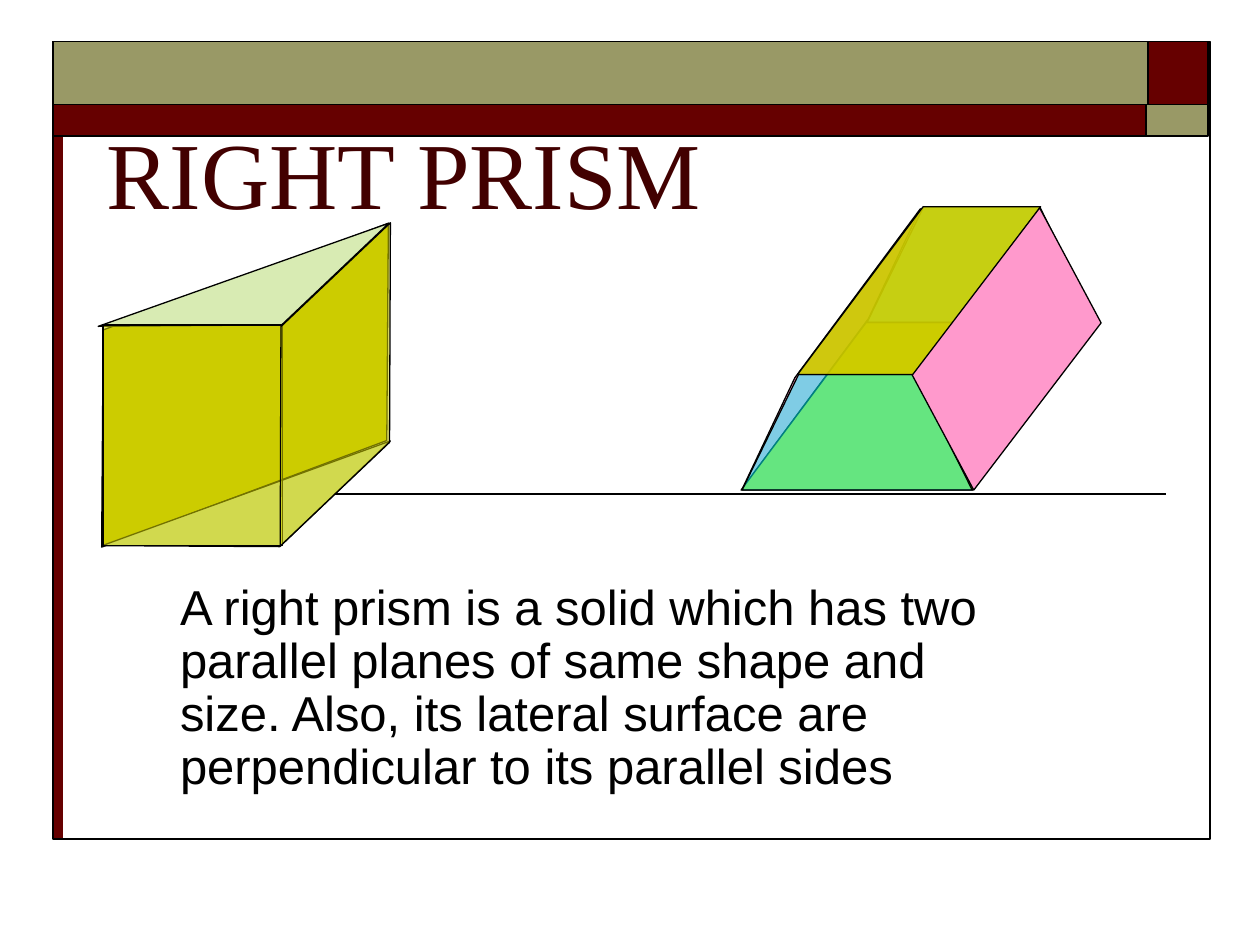
from lxml.etree import SubElement
from pptx import Presentation
from pptx.dml.color import RGBColor
from pptx.enum.shapes import MSO_CONNECTOR as CONN, MSO_SHAPE as SHAPE
from pptx.enum.text import MSO_ANCHOR as ANCHOR
from pptx.oxml.ns import qn
from pptx.util import Cm, Pt

MAROON, OLIVE, BLACK = "660000", "999966", "000000"
YELLOW, PINK, CYAN, PALE = "CCCC00", "FF99CC", "00FFFF", "D8EBB3"


def rgb(color):
    return RGBColor.from_string(color)


def style(s, fill=None, line=BLACK, width=0.75, alpha=None):
    """Set fill, opacity in percent and outline; drop the shadow."""
    s.shadow.inherit = False
    if fill:
        s.fill.solid()
        s.fill.fore_color.rgb = rgb(fill)
    else:
        s.fill.background()
    if alpha:
        clr = s.fill._xPr.find(qn("a:solidFill"))[0]
        SubElement(clr, qn("a:alpha")).set("val", str(alpha * 1000))
    if line:
        s.line.color.rgb = rgb(line)
        s.line.width = Pt(width)
    else:
        s.line.fill.background()


def add_box(sp, box, **fmt):
    s = sp.add_shape(SHAPE.RECTANGLE, *map(Cm, box))
    style(s, **fmt)


def add_slanted(sp, box, adj, rotation=0, **fmt):
    s = sp.add_shape(SHAPE.PARALLELOGRAM, *map(Cm, box))
    s.adjustments[0] = adj
    s.rotation = rotation
    style(s, **fmt)


def add_polygon(sp, points, **fmt):
    start, *rest = [(Cm(x), Cm(y)) for x, y in points]
    builder = sp.build_freeform(*start)
    builder.add_line_segments(rest, close=True)
    style(builder.convert_to_shape(), **fmt)


def add_line(sp, x1, y1, x2, y2, width=1):
    s = sp.add_connector(CONN.STRAIGHT, Cm(x1), Cm(y1), Cm(x2), Cm(y2))
    s.line.color.rgb = rgb(BLACK)
    s.line.width = Pt(width)
    SubElement(s._element.spPr, qn("a:effectLst"))


def add_text(sp, text, box, size, font, color=BLACK, anchor=ANCHOR.TOP,
             spacing=1.0, before=0):
    tf = sp.add_textbox(*map(Cm, box)).text_frame
    tf.word_wrap = True
    tf.vertical_anchor = anchor
    p = tf.paragraphs[0]
    p.line_spacing = spacing
    p.space_before = Pt(before)
    r = p.add_run()
    r.text = text
    r.font.size = Pt(size)
    r.font.name = font
    r.font.color.rgb = rgb(color)


def add_frame(sp):
    add_box(sp, (1.07, 2.74, 0.2, 14.17), fill=MAROON, line=None)
    for box, color in (
        ((23.09, 0.84, 1.27, 1.27), MAROON),
        ((1.07, 0.84, 22.07, 1.27), OLIVE),
        ((1.07, 2.11, 22.07, 0.64), MAROON),
        ((23.11, 2.11, 1.24, 0.64), OLIVE),
    ):
        add_box(sp, box, fill=color, width=1)
    add_line(sp, 23.5, 9.96, 2.11, 9.96)
    add_box(sp, (1.07, 0.84, 23.32, 16.08), width=1)


def add_triangular_back(sp):
    add_slanted(sp, (1.09, 5.72, 7.7, 4.09), 0.382, 339.5, fill=YELLOW)
    add_polygon(sp, [(5.64, 11.02), (7.87, 8.89), (2.06, 11)], fill=PALE)


def add_triangular_front(sp):
    add_polygon(sp, [(5.68, 6.55), (7.84, 4.5), (1.98, 6.58)], fill=PALE)
    add_box(sp, (2.08, 6.55, 3.61, 4.45), fill=YELLOW, alpha=56)
    add_slanted(sp, (3.71, 6.15, 6.1, 3.2), 0.956, 316.5, fill=YELLOW, alpha=56)


def add_trapezoidal_prism(sp):
    # Hidden side and base
    add_slanted(sp, (13.44, 6.78, 6.65, 0.48), 5.012, 306.6, fill=PINK)
    add_slanted(sp, (14.94, 6.5, 7.19, 3.38), 0.747, fill=YELLOW)
    # Far end, then the same end moved to the front
    end = [(22.12, 6.5), (20.96, 4.17), (18.62, 4.17), (17.48, 6.5)]
    for dx, dy in ((0, 0), (-2.52, 3.38)):
        add_polygon(sp, [(x + dx, y + dy) for x, y in end], fill=CYAN, alpha=50)
    # Top and right side
    add_slanted(sp, (16.08, 4.17, 4.9, 3.38), 0.748, fill=YELLOW, alpha=93)
    add_slanted(sp, (17.63, 5.84, 5.33, 2.39), 0.457, 307.3, fill=PINK)


def main():
    prs = Presentation()
    prs.slide_width, prs.slide_height = Cm(25.4), Cm(19.05)
    sp = prs.slides.add_slide(prs.slide_layouts[6]).shapes

    add_frame(sp)
    add_triangular_back(sp)
    add_trapezoidal_prism(sp)

    # Title and definition
    add_text(sp, "RIGHT PRISM", (1.9, 0.64, 21.59, 4.09), 54,
             "Times New Roman", color="420000", anchor=ANCHOR.BOTTOM)
    add_text(sp, "A right prism is a solid which has two parallel planes of "
             "same shape and size. Also, its lateral surface are "
             "perpendicular to its parallel sides",
             (3.38, 11.63, 17.78, 4.88), 28, "Arial", spacing=0.9, before=5.6)

    add_triangular_front(sp)
    prs.save("out.pptx")


if __name__ == "__main__":
    main()
